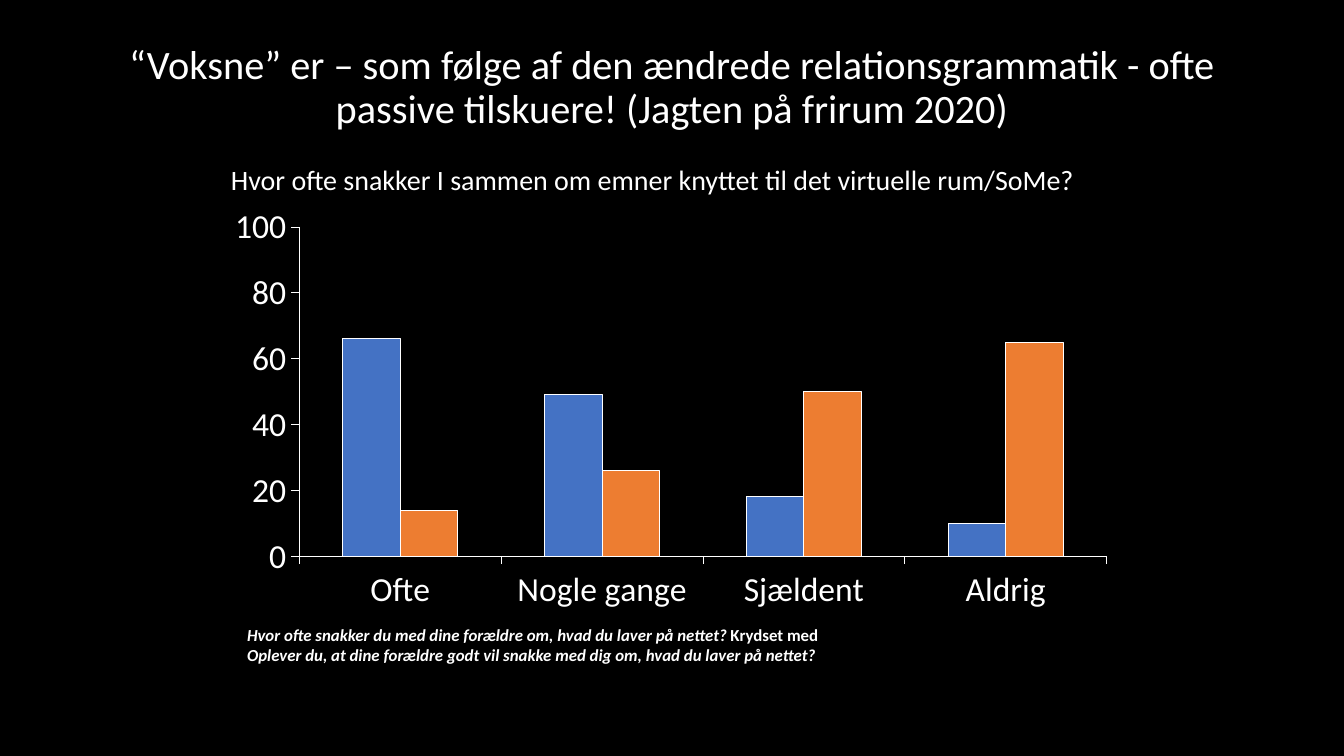
from pptx import Presentation
from pptx.chart.data import CategoryChartData as Data
from pptx.dml.color import RGBColor as RGB
from pptx.enum.chart import XL_CHART_TYPE as Kind, XL_TICK_MARK as Tick
from pptx.enum.text import MSO_ANCHOR as Anchor, PP_ALIGN as Align
from pptx.oxml import parse_xml
from pptx.oxml.ns import nsdecls
from pptx.util import Inches, Pt

HUES = {name: RGB.from_string(code) for name, code in {
    "back": "000000", "text": "FFFFFF", "blue": "4472C4", "orange": "ED7D31"}.items()}
FONT = "Calibri"


def add_text(slide, box, paras, size, wrap=False):
    """Add a text box; each paragraph is a list of (text, bold, italic)."""
    frame = slide.shapes.add_textbox(*map(Inches, box)).text_frame
    frame.word_wrap = wrap
    for i, parts in enumerate(paras):
        para = frame.add_paragraph() if i else frame.paragraphs[0]
        for text, bold, italic in parts:
            run = para.add_run()
            run.text = text
            font = run.font
            font.name, font.size = FONT, Pt(size)
            font.bold, font.italic = bold, italic
            font.color.rgb = HUES["text"]
    return frame


deck = Presentation()
deck.slide_width = Inches(10)
deck.slide_height = deck.slide_width * 9 // 16
slide = deck.slides.add_slide(deck.slide_layouts[6])
slide.background.fill.solid()
slide.background.fill.fore_color.rgb = HUES["back"]

# Title
title = add_text(slide, (0.69, 0.3, 8.62, 1.09), [[(
    "“Voksne” er – som følge af den ændrede relationsgrammatik - ofte "
    "passive tilskuere! (Jagten på frirum 2020)", False, False)]], 21.6, wrap=True)
title.vertical_anchor = Anchor.MIDDLE
title.margin_bottom = Inches(0.42)
title.paragraphs[0].alignment = Align.CENTER
title.paragraphs[0].line_spacing = 0.9

# Chart
data = Data()
data.categories = ["Ofte", "Nogle gange", "Sjældent", "Aldrig"]
data.add_series("Series 1", [66, 49, 18, 10])
data.add_series("Series 2", [14, 26, 50, 65])
chart = slide.shapes.add_chart(
    Kind.COLUMN_CLUSTERED, *map(Inches, (1.62, 1.47, 6.75, 3.14)), data).chart
chart.has_legend = chart.has_title = False
chart.font.name, chart.font.size = FONT, Pt(18)
chart.font.color.rgb = HUES["text"]

plot = chart.plots[0]
plot.gap_width, plot.overlap = 150, 0
plot.vary_by_categories = False
for series, hue in zip(plot.series, ("blue", "orange")):
    series.format.fill.solid()
    series.format.fill.fore_color.rgb = HUES[hue]
    series.format.line.color.rgb = HUES["text"]
    series.format.line.width = Pt(0.5)

for axis in (chart.category_axis, chart.value_axis):
    axis.has_major_gridlines = False
    axis.major_tick_mark, axis.minor_tick_mark = Tick.OUTSIDE, Tick.NONE
    axis.format.line.color.rgb = HUES["text"]
    axis.format.line.width = Pt(0.5)
scale = chart.value_axis
scale.minimum_scale, scale.maximum_scale, scale.major_unit = 0, 100, 20

# Place of the plot inside the chart, as shares of its size
area = (("x", 0.09), ("y", 0.07), ("w", 0.89), ("h", 0.78))
marks = '<c:layoutTarget val="inner"/><c:xMode val="edge"/><c:yMode val="edge"/>'
marks += "".join(f'<c:{key} val="{share}"/>' for key, share in area)
chart.element.chart.plotArea.insert(0, parse_xml(
    f'<c:layout {nsdecls("c")}><c:manualLayout>{marks}</c:manualLayout></c:layout>'))

# Chart heading and source questions
add_text(slide, (1.62, 1.16, 6.6, 0.35), [[(
    "Hvor ofte snakker I sammen om emner knyttet til det virtuelle rum/SoMe?",
    False, False)]], 15)
add_text(slide, (1.74, 4.6, 4.54, 0.4), [
    [("Hvor ofte snakker du med dine forældre om, hvad du laver på nettet?", True, True),
     (" Krydset med", True, False)],
    [("Oplever du, at dine forældre godt vil snakke med dig om, hvad du laver på nettet?",
      True, True)]], 9)

deck.save("out.pptx")
